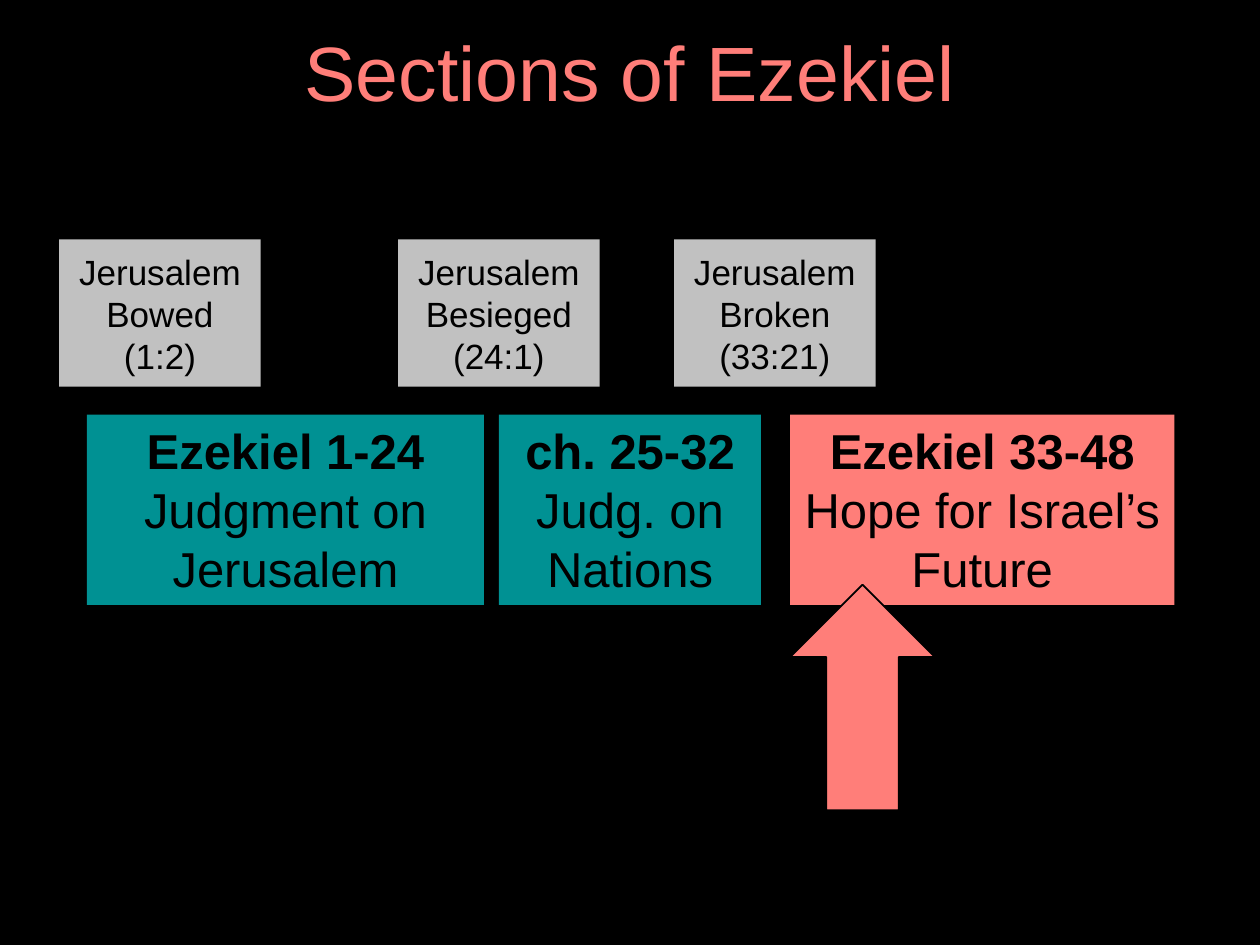
from pptx import Presentation
from pptx.dml.color import RGBColor
from pptx.enum import shapes, text
from pptx.util import Inches, Pt

COLORS = {
    "black": "000000",
    "coral": "FF7E79",
    "teal": "009193",
    "gray": "C1C1C1",
}
FONT = "Arial"

# left, heading, subject
EVENTS = [
    (0.47, "Jerusalem Bowed", "(1:2)"),
    (3.16, "Jerusalem Besieged", "(24:1)"),
    (5.35, "Jerusalem Broken", "(33:21)"),
]
# left, width, color, chapters, theme
SECTIONS = [
    (0.69, 3.15, "teal", "Ezekiel 1-24", "Judgment on Jerusalem"),
    (3.96, 2.08, "teal", "ch. 25-32", "Judg. on Nations"),
    (6.27, 3.05, "coral", "Ezekiel 33-48", "Hope for Israel’s Future"),
]


def rgb(name):
    return RGBColor.from_string(COLORS[name])


def write_lines(box, lines, size, color="black", bold_first=False):
    """Fill a box with centred paragraphs, optionally with a bold first one."""
    frame = box.text_frame
    frame.word_wrap = True
    for index, line in enumerate(lines):
        para = frame.paragraphs[0] if index == 0 else frame.add_paragraph()
        para.text = line
        para.alignment = text.PP_ALIGN.CENTER
        para.font.name = FONT
        para.font.size = Pt(size)
        para.font.bold = bold_first and index == 0
        para.font.color.rgb = rgb(color)
    return frame


def add_title(page, title):
    box = page.shapes.add_textbox(Inches(0.69), Inches(0.16), Inches(8.62), Inches(0.9))
    frame = write_lines(box, [title], 44, "coral")
    frame.vertical_anchor = text.MSO_ANCHOR.MIDDLE
    frame.paragraphs[0].line_spacing = 0.9


def add_filled_shape(page, kind, left, top, width, height, color):
    shape = page.shapes.add_shape(
        kind, Inches(left), Inches(top), Inches(width), Inches(height))
    shape.shadow.inherit = False
    shape.fill.solid()
    shape.fill.fore_color.rgb = rgb(color)
    shape.line.fill.background()
    return shape


def add_section(page, left, width, color, chapters, theme):
    box = add_filled_shape(
        page, shapes.MSO_SHAPE.RECTANGLE, left, 3.29, width, 1.51, color)
    frame = write_lines(box, [chapters, theme], 28, bold_first=True)
    frame.vertical_anchor = text.MSO_ANCHOR.TOP
    frame.auto_size = text.MSO_AUTO_SIZE.SHAPE_TO_FIT_TEXT


def add_event(page, left, event, verse):
    box = add_filled_shape(
        page, shapes.MSO_SHAPE.RECTANGLE, left, 1.9, 1.6, 1.17, "gray")
    frame = write_lines(box, [event, verse], 20)
    frame.vertical_anchor = text.MSO_ANCHOR.MIDDLE


def add_marker_arrow(page):
    arrow = add_filled_shape(
        page, shapes.MSO_SHAPE.UP_ARROW, 6.27, 4.64, 1.15, 1.79, "coral")
    arrow.line.color.rgb = rgb("black")
    arrow.line.width = Pt(1)


def main():
    deck = Presentation()
    deck.slide_width, deck.slide_height = Inches(10), Inches(7.5)
    page = deck.slides.add_slide(deck.slide_layouts[6])
    page.background.fill.solid()
    page.background.fill.fore_color.rgb = rgb("black")

    add_title(page, "Sections of Ezekiel")
    for section in SECTIONS:
        add_section(page, *section)
    for event in EVENTS:
        add_event(page, *event)
    add_marker_arrow(page)
    deck.save("out.pptx")


if __name__ == "__main__":
    main()
